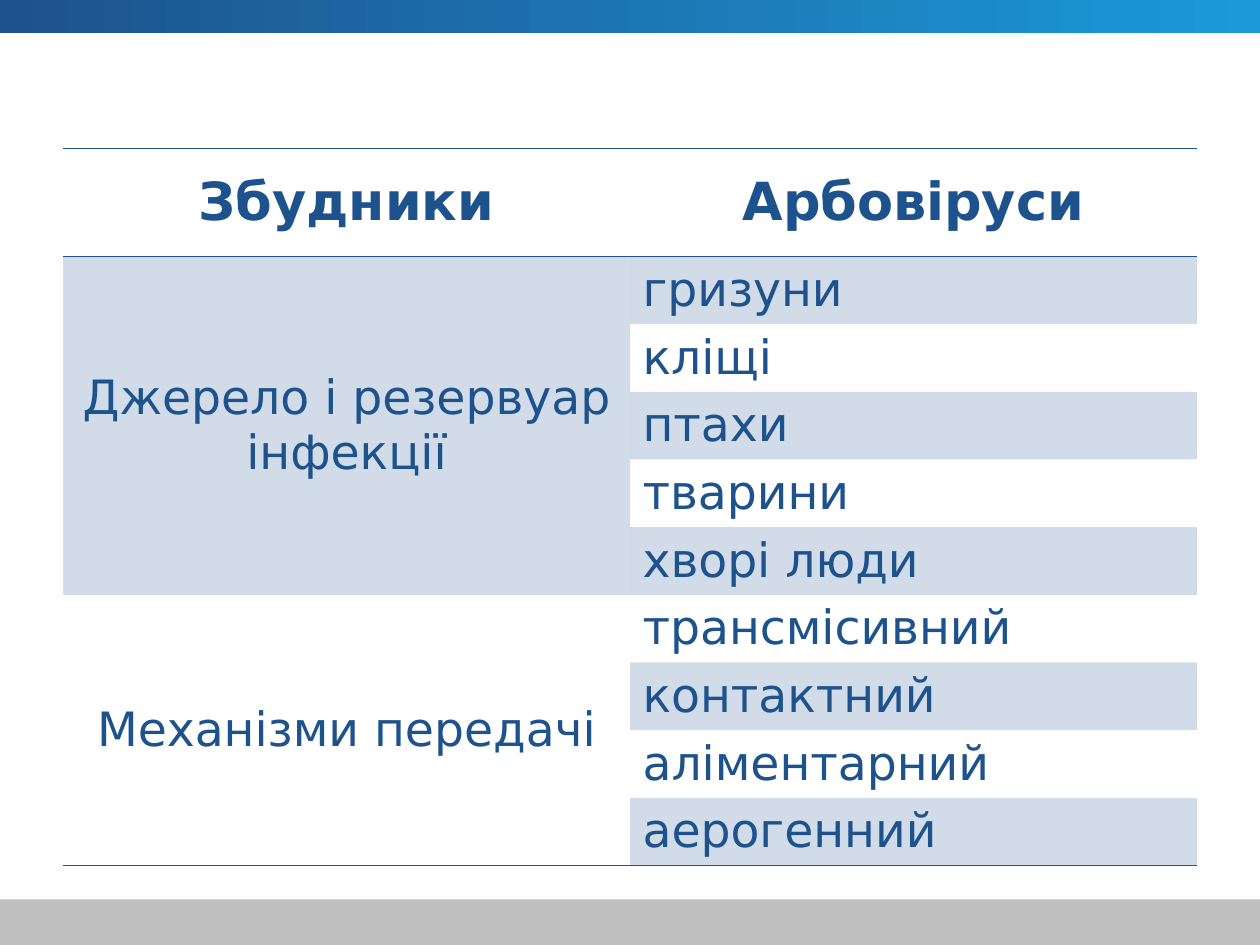
from lxml import etree
from pptx import Presentation
from pptx.dml.color import RGBColor
from pptx.enum.shapes import MSO_SHAPE
from pptx.enum.text import MSO_ANCHOR, PP_ALIGN
from pptx.oxml.ns import qn
from pptx.util import Cm, Pt

RECTANGLE = MSO_SHAPE.RECTANGLE
MIDDLE, TOP = MSO_ANCHOR.MIDDLE, MSO_ANCHOR.TOP
CENTER, LEFT = PP_ALIGN.CENTER, PP_ALIGN.LEFT

NAVY = RGBColor(0x1D, 0x52, 0x8D)
SKY = RGBColor(0x1B, 0x9A, 0xD9)
GRAY = RGBColor(0xC0, 0xC0, 0xC0)
FONT = "DejaVu Sans"
PLAIN_STYLE = "{2D5ABB26-0587-4C30-8999-92F81FD0307C}"  # no style, no grid

# Content
HEADINGS = ("Збудники", "Арбовіруси")
GROUPS = [
    ("Джерело і резервуар інфекції",
     ["гризуни", "кліщі", "птахи", "тварини", "хворі люди"]),
    ("Механізми передачі",
     ["трансмісивний", "контактний", "аліментарний", "аерогенний"]),
]

# Layout in centimetres
SLIDE_W, SLIDE_H = 25.4, 19.05
TOP_BAND_H, BOTTOM_BAND_H = 0.66, 0.92
TABLE_LEFT, TABLE_TOP, COLUMN_W = 1.27, 2.99, 11.43
HEADING_H, ROW_H = 2.18, 1.36


def add_band(slide, top, height):
    band = slide.shapes.add_shape(RECTANGLE, 0, Cm(top), Cm(SLIDE_W), Cm(height))
    band.shadow.inherit = False
    band.line.fill.background()
    return band


def write(cell, text, size=27, bold=False, align=LEFT, anchor=TOP):
    cell.vertical_anchor = anchor
    paragraph = cell.text_frame.paragraphs[0]
    paragraph.alignment = align
    run = paragraph.add_run()
    run.text = text
    run.font.name = FONT
    run.font.size = Pt(size)
    run.font.bold = bold
    run.font.color.rgb = NAVY


def add_rules(cell, *sides):
    """Draw thin lines on the given sides, in the order lnT, lnB."""
    properties = cell._tc.get_or_add_tcPr()
    for position, side in enumerate(sides):
        line = etree.Element(qn(f"a:{side}"), w=str(Pt(1)))
        fill = etree.SubElement(line, qn("a:solidFill"))
        etree.SubElement(fill, qn("a:srgbClr"), val=str(NAVY))
        properties.insert(position, line)


def shade(cell, tinted):
    if not tinted:
        cell.fill.background()
        return
    cell.fill.solid()
    cell.fill.fore_color.rgb = NAVY
    color = cell._tc.tcPr.find(f"{qn('a:solidFill')}/{qn('a:srgbClr')}")
    etree.SubElement(color, qn("a:alpha"), val="20000")


presentation = Presentation()
presentation.slide_width, presentation.slide_height = Cm(SLIDE_W), Cm(SLIDE_H)
slide = presentation.slides.add_slide(presentation.slide_layouts[6])

# Bands at the bottom and top edges
bottom_band = add_band(slide, SLIDE_H - BOTTOM_BAND_H, BOTTOM_BAND_H)
bottom_band.fill.solid()
bottom_band.fill.fore_color.rgb = GRAY

top_band = add_band(slide, 0, TOP_BAND_H)
top_band.fill.gradient()
top_band.fill.gradient_angle = 0
for stop, color, position in zip(top_band.fill.gradient_stops, (NAVY, SKY), (0, 1)):
    stop.color.rgb = color
    stop.position = position

# Table grid
item_count = sum(len(items) for _, items in GROUPS)
table = slide.shapes.add_table(
    item_count + 1, 2, Cm(TABLE_LEFT), Cm(TABLE_TOP),
    Cm(2 * COLUMN_W), Cm(HEADING_H + item_count * ROW_H)).table
table.horz_banding = False
table._tbl.tblPr.find(qn("a:tableStyleId")).text = PLAIN_STYLE
for index, row in enumerate(table.rows):
    row.height = Cm(ROW_H if index else HEADING_H)

# Headings and closing rule
for column, heading in enumerate(HEADINGS):
    cell = table.cell(0, column)
    write(cell, heading, size=30, bold=True, align=CENTER, anchor=MIDDLE)
    add_rules(cell, "lnT", "lnB")
    shade(cell, False)
    add_rules(table.cell(item_count, column), "lnB")

# Groups: a merged label on the left, alternating rows on the right
first = 1
for group, (label, items) in enumerate(GROUPS):
    last = first + len(items) - 1
    label_cell = table.cell(first, 0)
    label_cell.merge(table.cell(last, 0))
    write(label_cell, label, align=CENTER, anchor=MIDDLE)
    if last == item_count:
        add_rules(label_cell, "lnB")
    shade(label_cell, group % 2 == 0)
    for row, item in enumerate(items, first):
        write(table.cell(row, 1), item)
        shade(table.cell(row, 1), row % 2 == 1)
    first = last + 1

presentation.save("out.pptx")
